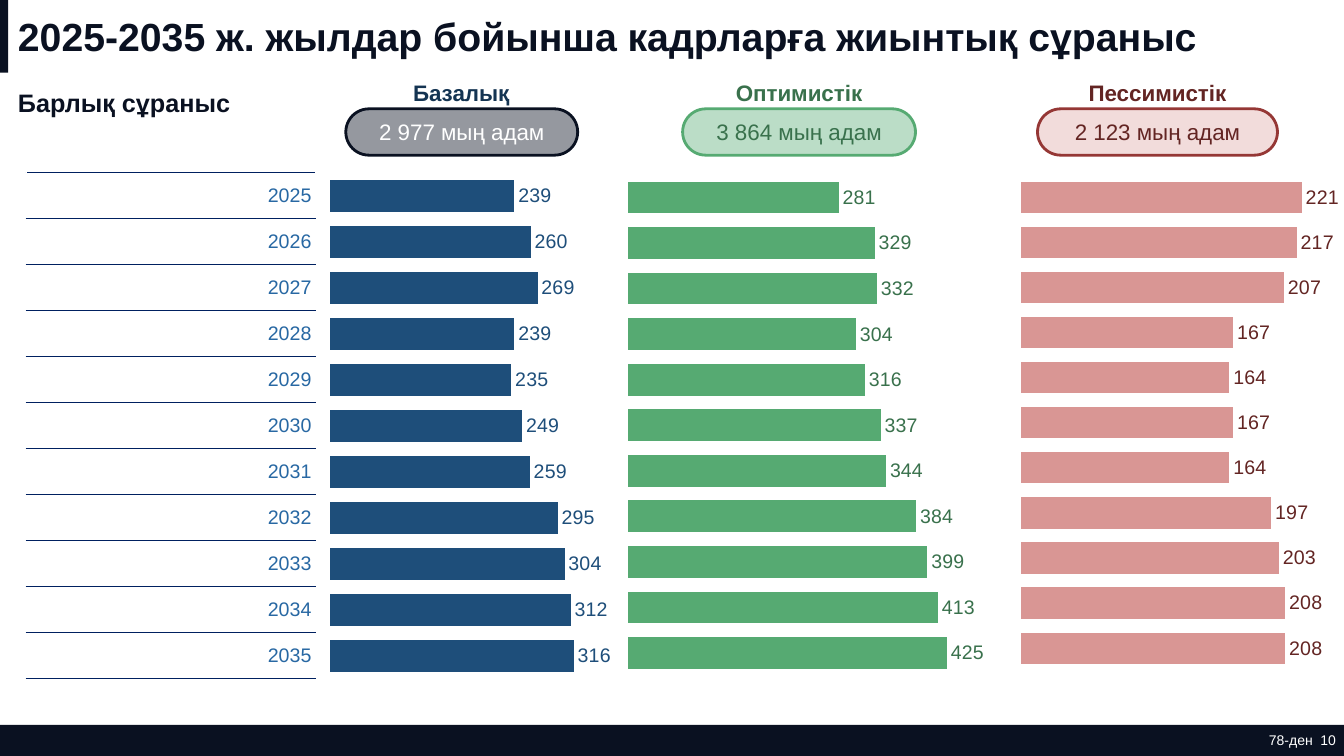
from lxml.etree import SubElement
from pptx import Presentation
from pptx.chart.data import CategoryChartData
from pptx.dml.color import RGBColor
from pptx.enum.chart import XL_CHART_TYPE as ChartType, XL_LABEL_POSITION as LabelPosition
from pptx.enum.shapes import MSO_SHAPE as Shape
from pptx.enum.text import MSO_ANCHOR as Anchor, PP_ALIGN as Align
from pptx.oxml import parse_xml
from pptx.oxml.ns import nsdecls, qn
from pptx.util import Inches, Pt

NAVY = RGBColor(0x0A, 0x11, 0x21)
WHITE = RGBColor(0xFF, 0xFF, 0xFF)
BLACK = RGBColor(0x00, 0x00, 0x00)
YEAR_BLUE = RGBColor(0x28, 0x68, 0xA3)
DARK_BLUE = RGBColor(0x14, 0x34, 0x52)
BAR_BLUE = RGBColor(0x1E, 0x4E, 0x7A)
DARK_GREEN = RGBColor(0x39, 0x71, 0x4C)
GREEN = RGBColor(0x56, 0xAA, 0x72)
PALE_GREEN = RGBColor(0xBB, 0xDD, 0xC7)
DARK_RED = RGBColor(0x63, 0x25, 0x23)
RED = RGBColor(0x95, 0x37, 0x35)
PINK = RGBColor(0xD9, 0x96, 0x94)
PALE_PINK = RGBColor(0xF2, 0xDC, 0xDB)

RULE_COLOR = "002060"
FONT = "Arial"
YEARS = range(2025, 2036)

# Boxes are (left, top, width, height) in inches; values run from 2025 to 2035.
SCENARIOS = [
    dict(heading=("Базалық", (3.45, 0.69, 2.25, 0.46), DARK_BLUE),
         pill=("2 977 мың адам", (3.43, 1.08, 2.3, 0.46), NAVY, NAVY, WHITE, 43),
         chart=([239, 260, 269, 239, 235, 249, 259, 295, 304, 312, 316],
                (3.19, 1.54, 2.87, 5.3), (0.033, 0.947), 358, BAR_BLUE, BAR_BLUE)),
    dict(heading=("Оптимистік", (6.8, 0.69, 2.25, 0.46), DARK_GREEN),
         pill=("3 864 мың адам", (6.77, 1.08, 2.31, 0.46), PALE_GREEN, GREEN, DARK_GREEN),
         chart=([281, 329, 332, 304, 316, 337, 344, 384, 399, 413, 425],
                (6.12, 1.54, 3.64, 5.27), (0.037, 0.943), 465, GREEN, DARK_GREEN)),
    dict(heading=("Пессимистік", (10.23, 0.69, 2.5, 0.46), DARK_RED),
         pill=("2 123 мың адам", (10.29, 1.08, 2.38, 0.46), PALE_PINK, RED, DARK_RED),
         chart=([221, 217, 207, 167, 164, 167, 164, 197, 203, 208, 208],
                (10.03, 1.54, 3.29, 5.22), (0.037, 0.943), 250, PINK, DARK_RED)),
]


def inches(box):
    return [Inches(length) for length in box]


class DemandSlide:
    def __init__(self, slide, font):
        self.shapes = slide.shapes
        self.font = font

    def style(self, font, size, color, bold=False):
        font.name, font.size, font.bold = self.font, Pt(size), bold
        font.color.rgb = color

    def set_text(self, frame, text, size, color, bold=False, align=Align.LEFT):
        frame.text = text
        frame.word_wrap = True
        frame.vertical_anchor = Anchor.MIDDLE
        paragraph = frame.paragraphs[0]
        paragraph.alignment = align
        self.style(paragraph.runs[0].font, size, color, bold)

    def label(self, text, box, size, color, bold=True, align=Align.LEFT):
        frame = self.shapes.add_textbox(*inches(box)).text_frame
        self.set_text(frame, text, size, color, bold, align)
        return frame

    def band(self, box):
        band = self.shapes.add_shape(Shape.RECTANGLE, *inches(box))
        band.shadow.inherit = False
        band.fill.solid()
        band.fill.fore_color.rgb = NAVY
        band.line.fill.background()

    def pill(self, text, box, fill, outline, color, opacity=100):
        pill = self.shapes.add_shape(Shape.ROUNDED_RECTANGLE, *inches(box))
        pill.adjustments[0] = 0.5
        pill.shadow.inherit = False
        pill.fill.solid()
        pill.fill.fore_color.rgb = fill
        if opacity < 100:
            tint = pill._element.spPr.find(qn("a:solidFill")).find(qn("a:srgbClr"))
            SubElement(tint, qn("a:alpha"), val=str(opacity * 1000))
        pill.line.color.rgb = outline
        pill.line.width = Pt(2)
        self.set_text(pill.text_frame, text, 16, color, align=Align.CENTER)

    def year_table(self, years, box):
        table = self.shapes.add_table(len(years), 1, *inches(box)).table
        table.first_row = table.horz_banding = False
        for row, year in enumerate(years):
            cell = table.cell(row, 0)
            cell.margin_left, cell.margin_right = Inches(0.01), Inches(0.04)
            cell.margin_top = cell.margin_bottom = 0
            cell.vertical_anchor = Anchor.MIDDLE
            cell.text = str(year)
            paragraph = cell.text_frame.paragraphs[0]
            paragraph.alignment = Align.RIGHT
            self.style(paragraph.runs[0].font, 14, YEAR_BLUE)
            cell.fill.background()
            self.rule_cell(cell)

    def rule_cell(self, cell):
        """Draw a hairline above and below the cell."""
        for index, side in enumerate(("lnT", "lnB")):
            cell._tc.get_or_add_tcPr().insert(index, parse_xml(
                f'<a:{side} {nsdecls("a")} w="3175"><a:solidFill>'
                f'<a:srgbClr val="{RULE_COLOR}"/></a:solidFill></a:{side}>'))

    def bar_chart(self, values, box, plot_span, axis_max, bar_color, label_color):
        data = CategoryChartData(number_format="#,##0")
        data.categories = [str(number) for number in range(1, len(values) + 1)]
        data.add_series("Series 1", values[::-1])  # bars stack from the bottom up
        chart = self.shapes.add_chart(ChartType.BAR_CLUSTERED, *inches(box), data).chart
        self.style(chart.font, 10, BLACK)
        chart.has_legend = chart.has_title = False
        chart.category_axis.visible = False
        axis = chart.value_axis
        axis.visible = axis.has_major_gridlines = False
        axis.minimum_scale, axis.maximum_scale = 0, axis_max

        plot = chart.plots[0]
        plot.gap_width = 44
        plot.vary_by_categories = False
        bars = plot.series[0]
        bars.format.fill.solid()
        bars.format.fill.fore_color.rgb = bar_color
        labels = bars.data_labels
        labels.show_value = True
        labels.position = LabelPosition.OUTSIDE_END
        labels.number_format, labels.number_format_is_linked = "#,##0", False
        self.style(labels.font, 14, label_color)
        self.place_plot(chart, plot_span)

    def place_plot(self, chart, plot_span):
        """Fix the inner plot area as fractions of the chart frame."""
        area = chart._chartSpace.chart.plotArea
        for automatic in area.findall(qn("c:layout")):
            area.remove(automatic)
        layout = SubElement(area, qn("c:layout"))
        area.insert(0, layout)
        manual = SubElement(layout, qn("c:manualLayout"))
        top, height = plot_span
        for tag, value in (("layoutTarget", "inner"), ("xMode", "edge"), ("yMode", "edge"),
                           ("x", 0.029), ("y", top), ("w", 0.958), ("h", height)):
            SubElement(manual, qn(f"c:{tag}"), val=str(value))


def main():
    deck = Presentation()
    deck.slide_width, deck.slide_height = Inches(13.33), Inches(7.5)
    page = DemandSlide(deck.slides.add_slide(deck.slide_layouts[6]), FONT)

    page.band((0, 7.19, 13.33, 0.31))
    page.band((0, 0, 0.08, 0.72))
    page.label("2025-2035 ж. жылдар бойынша кадрларға жиынтық сұраныс",
               (0.08, 0, 13.25, 0.72), 28, NAVY)
    page_number = page.label("78-ден  10", (12.04, 7.19, 1.21, 0.31), 10, WHITE,
                             bold=False, align=Align.RIGHT)
    page_number.margin_right = 0
    page.label("Барлық сұраныс", (0.08, 0.77, 3.77, 0.5), 18, NAVY)

    page.year_table(YEARS, (0.26, 1.71, 2.87, 5.02))
    for scenario in SCENARIOS:
        heading, box, color = scenario["heading"]
        page.label(heading, box, 16, color, align=Align.CENTER)
        page.pill(*scenario["pill"])
        page.bar_chart(*scenario["chart"])

    deck.save("out.pptx")


if __name__ == "__main__":
    main()
